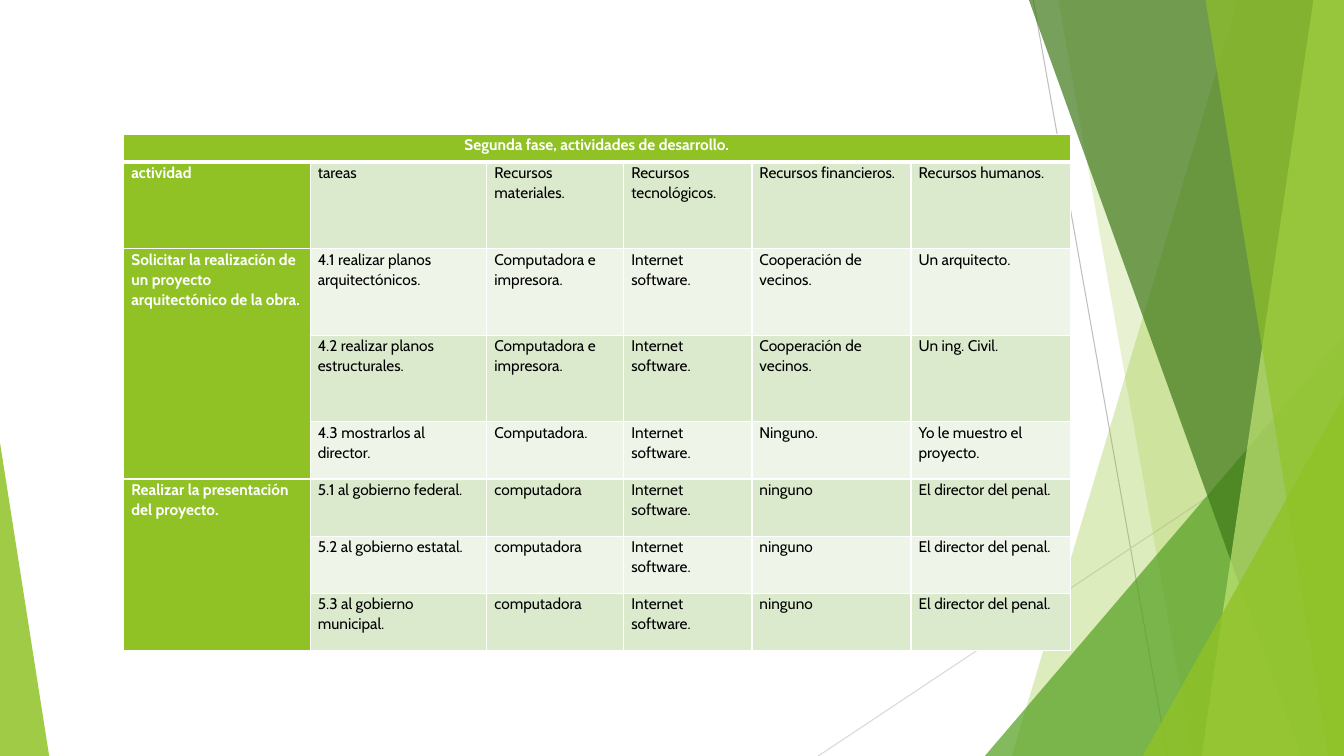
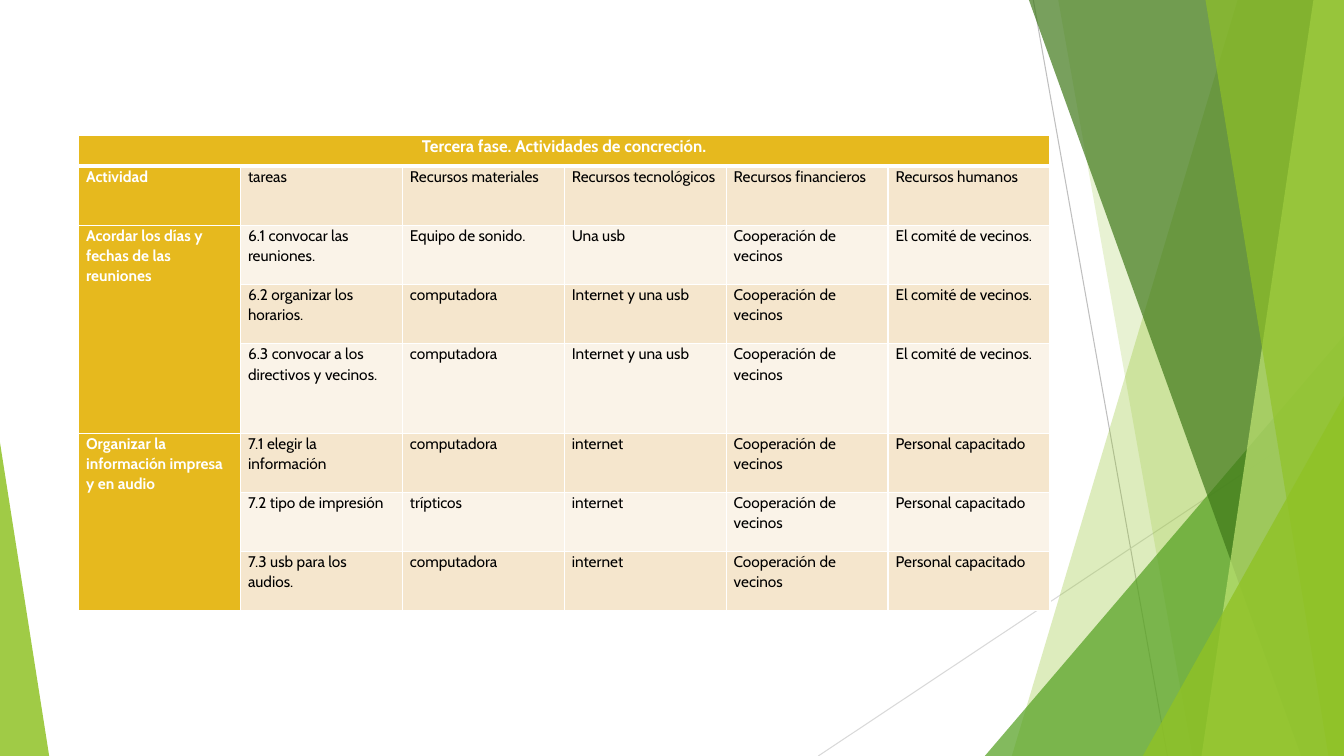
import lxml.etree
import pptx
import pptx.dml.color
import pptx.enum.shapes
import pptx.enum.text
import pptx.oxml.ns
import pptx.util

Cm = pptx.util.Cm
Pt = pptx.util.Pt
qn = pptx.oxml.ns.qn

COLORS = {
    "white": "FFFFFF", "black": "000000",
    "gray": "BFBFBF", "light gray": "D9D9D9",
    "lime": "90C226", "leaf": "54A021", "forest": "3F7819", "pale lime": "C0E474",
    "lime band": "DBE9CD", "lime tint": "EEF4E8",
    "gold": "E6B91E", "gold band": "F5E6CD", "gold tint": "FAF3E8",
}
FONT = "Cabin"
WIDTH, HEIGHT = 33.87, 19.05


def rgb(name):
    return pptx.dml.color.RGBColor.from_string(COLORS[name])


def write_text(text_frame, text, size=11, color="black", bold=False, align="LEFT"):
    paragraph = text_frame.paragraphs[0]
    paragraph.alignment = getattr(pptx.enum.text.PP_ALIGN, align)
    paragraph.line_spacing = 1.07
    run = paragraph.add_run()
    run.text = text
    run.font.name = FONT
    run.font.size = Pt(size)
    run.font.bold = bold
    run.font.color.rgb = rgb(color)


presentation = pptx.Presentation()
presentation.slide_width = Cm(WIDTH)
presentation.slide_height = Cm(HEIGHT)
blank_layout = presentation.slide_layouts[6]
for placeholder in list(blank_layout.placeholders):
    placeholder.element.getparent().remove(placeholder.element)

slides = [presentation.slides.add_slide(blank_layout) for _ in range(2)]

# Shared background, drawn once and then moved to the layout
shapes = slides[0].shapes
for x1, y1, x2, y2, color in [
    (26.04, 0, 29.42, HEIGHT, "gray"),
    (WIDTH, 10.24, 20.62, HEIGHT, "light gray"),
]:
    connector = shapes.add_connector(
        pptx.enum.shapes.MSO_CONNECTOR.STRAIGHT, Cm(x1), Cm(y1), Cm(x2), Cm(y2))
    connector.line.color.rgb = rgb(color)
    connector.line.width = Pt(0.75)
    lxml.etree.SubElement(connector.element.spPr, qn("a:effectLst"))

# panel: top x, bottom x (reaches the right edge)
# triangle: left, top, right, apex position (reaches the bottom edge)
for kind, geometry, color, opacity in [
    ("panel", (31.19, 25.5), "lime", 30),
    ("panel", (26.67, 30.05), "lime", 20),
    ("triangle", (24.82, 8.46, WIDTH, 1), "leaf", 72),
    ("panel", (25.93, 32.79), "forest", 70),
    ("panel", (33.1, 30.28), "pale lime", 70),
    ("panel", (30.38, 33.48), "lime", 65),
    ("triangle", (28.8, 9.98, WIDTH, 1), "lime", 80),
    ("triangle", (0, 11.15, 1.24, 0), "lime", 85),
]:
    if kind == "panel":
        top_x, bottom_x = geometry
        builder = shapes.build_freeform(Cm(top_x), 0)
        builder.add_line_segments([
            (Cm(WIDTH), 0), (Cm(WIDTH), Cm(HEIGHT)), (Cm(bottom_x), Cm(HEIGHT))])
        shape = builder.convert_to_shape()
    else:
        left, top, right, apex = geometry
        shape = shapes.add_shape(
            pptx.enum.shapes.MSO_SHAPE.ISOSCELES_TRIANGLE,
            Cm(left), Cm(top), Cm(right - left), Cm(HEIGHT - top))
        shape.adjustments[0] = apex
    shape.shadow.inherit = False
    shape.line.fill.background()
    shape.fill.solid()
    shape.fill.fore_color.rgb = rgb(color)
    color_element = shape.element.spPr.find(qn("a:solidFill"))[0]
    lxml.etree.SubElement(color_element, qn("a:alpha"), val=str(opacity * 1000))

for shape in list(shapes):
    blank_layout.shapes.element.append(shape.element)

# Tables: an empty cell continues the merged cell before it
tables = [
    {
        "color": "lime", "title_size": 11, "left": 3.12, "top": 3.38,
        "columns": [4.7, 4.45, 3.45, 3.23, 4.01, 4.01],
        "heights": [0.71] + [2.18] * 3 + [1.44] * 4,
        "rows": [
            ("Segunda fase, actividades de desarrollo.", "", "", "", "", ""),
            ("actividad", "tareas", "Recursos materiales.", "Recursos tecnológicos.",
             "Recursos financieros.", "Recursos humanos."),
            ("Solicitar la realización de un proyecto arquitectónico de la obra.",
             "4.1 realizar planos arquitectónicos.", "Computadora e impresora.",
             "Internet software.", "Cooperación de vecinos.", "Un arquitecto."),
            ("", "4.2 realizar planos estructurales.", "Computadora e impresora.",
             "Internet software.", "Cooperación de vecinos.", "Un ing. Civil."),
            ("", "4.3 mostrarlos al director.", "Computadora.",
             "Internet software.", "Ninguno.", "Yo le muestro el proyecto."),
            ("Realizar la presentación del proyecto.", "5.1 al gobierno federal.",
             "computadora", "Internet software.", "ninguno", "El director del penal."),
            ("", "5.2 al gobierno estatal.",
             "computadora", "Internet software.", "ninguno", "El director del penal."),
            ("", "5.3 al gobierno municipal.",
             "computadora", "Internet software.", "ninguno", "El director del penal."),
        ],
    },
    {
        "color": "gold", "title_size": 12, "left": 1.98, "top": 3.4,
        "columns": [4.08] * 6,
        "heights": [0.79] + [1.49] * 3 + [2.26] + [1.49] * 3,
        "rows": [
            ("Tercera fase. Actividades de concreción.", "", "", "", "", ""),
            ("Actividad", "tareas", "Recursos materiales", "Recursos tecnológicos",
             "Recursos financieros", "Recursos humanos"),
            ("Acordar los días y fechas de las reuniones", "6.1 convocar las reuniones.",
             "Equipo de sonido.", "Una usb", "Cooperación de vecinos",
             "El comité de vecinos."),
            ("", "6.2 organizar los horarios.", "computadora", "Internet y una usb",
             "Cooperación de vecinos", "El comité de vecinos."),
            ("", "6.3 convocar a los directivos y vecinos.", "computadora",
             "Internet y una usb", "Cooperación de vecinos", "El comité de vecinos."),
            ("Organizar la información impresa y en audio", "7.1 elegir la información",
             "computadora", "internet", "Cooperación de vecinos", "Personal capacitado"),
            ("", "7.2 tipo de impresión", "trípticos", "internet",
             "Cooperación de vecinos", "Personal capacitado"),
            ("", "7.3 usb para los audios.", "computadora", "internet",
             "Cooperación de vecinos", "Personal capacitado"),
        ],
    },
]

for slide, content in zip(slides, tables):
    columns, heights = content["columns"], content["heights"]
    table = slide.shapes.add_table(
        len(heights), len(columns), Cm(content["left"]), Cm(content["top"]),
        Cm(sum(columns)), Cm(sum(heights))).table
    table.first_row = False
    table.horz_banding = False
    for column, width in zip(table.columns, columns):
        column.width = Cm(width)
    for row, height in zip(table.rows, heights):
        row.height = Cm(height)

    # Title across the top, one activity for every three tasks
    table.cell(0, 0).merge(table.cell(0, 5))
    for first in (2, 5):
        table.cell(first, 0).merge(table.cell(first + 2, 0))

    for row_index, texts in enumerate(content["rows"]):
        for column_index, text in enumerate(texts):
            cell = table.cell(row_index, column_index)
            cell.margin_left = cell.margin_right = Cm(0.19)
            cell.margin_top = cell.margin_bottom = 0

            # White borders, thicker under the title
            properties = cell._tc.get_or_add_tcPr()
            for side in "LRTB":
                under_title = (row_index, side) in [(0, "B"), (1, "T")]
                border = lxml.etree.SubElement(
                    properties, qn("a:ln" + side), w=str(Pt(3 if under_title else 1)))
                border_fill = lxml.etree.SubElement(border, qn("a:solidFill"))
                lxml.etree.SubElement(
                    border_fill, qn("a:srgbClr"), val=COLORS["white"])

            is_title = row_index == 0
            is_heading = is_title or column_index == 0
            shade = "" if is_heading else " band" if row_index % 2 else " tint"
            cell.fill.solid()
            cell.fill.fore_color.rgb = rgb(content["color"] + shade)
            write_text(
                cell.text_frame, text,
                size=content["title_size"] if is_title else 11,
                color="white" if is_heading else "black",
                bold=is_heading,
                align="CENTER" if is_title else "LEFT")

presentation.save("out.pptx")
